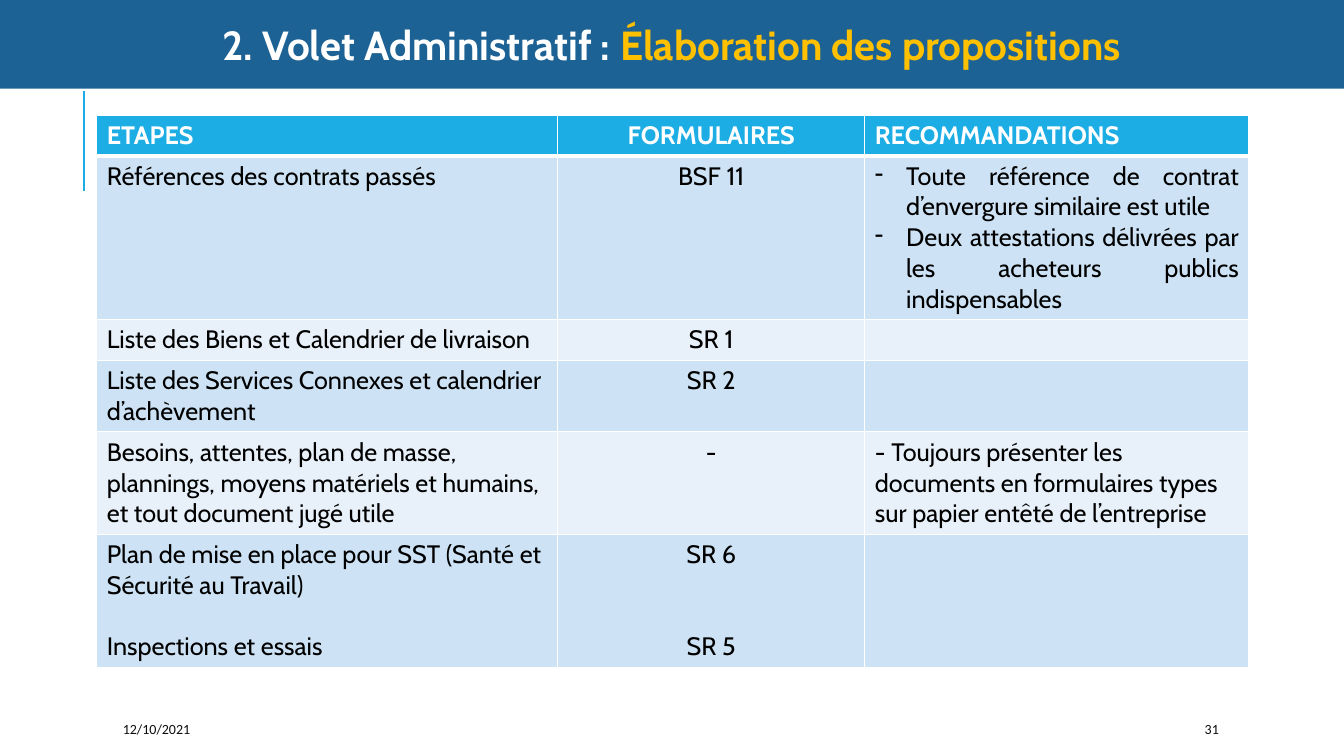
from dataclasses import dataclass

from lxml.etree import SubElement
from pptx import Presentation
from pptx.dml.color import RGBColor
from pptx.enum.shapes import MSO_CONNECTOR, MSO_SHAPE
from pptx.enum.text import MSO_ANCHOR, PP_ALIGN
from pptx.oxml.ns import qn
from pptx.util import Inches, Pt

SLIDE_WIDTH, SLIDE_HEIGHT = Inches(13.33), Inches(7.5)


@dataclass(frozen=True)
class Theme:
    font: str = "Cabin"
    footer_font: str = "Calibri"
    title_size: float = 29
    table_size: float = 18
    footer_size: float = 10
    white: str = "FFFFFF"
    black: str = "000000"
    footer_ink: str = "0D0D0D"
    banner: str = "1D6294"
    highlight: str = "FFC000"
    accent: str = "1CADE4"
    bands: tuple = ("CDE3F5", "E8F1FA")


THEME = Theme()
TABLE_LINE = Inches(0.305)
CELL_PADDING = Inches(0.1)
COLUMN_SHARES = (6, 4, 5)
COLUMN_ALIGNS = (PP_ALIGN.LEFT, PP_ALIGN.CENTER, PP_ALIGN.LEFT)
HEADINGS = ("ETAPES", "FORMULAIRES", "RECOMMANDATIONS")

# Lines of text in the row, then the paragraphs of its three cells
STEPS = [
    (5, ["Références des contrats passés"], ["BSF 11"],
     ["• Toute référence de contrat d’envergure similaire est utile",
      "• Deux attestations délivrées par les acheteurs publics indispensables"]),
    (1, ["Liste des Biens et Calendrier de livraison"], ["SR 1"], []),
    (2, ["Liste des Services Connexes et calendrier d’achèvement"], ["SR 2"], []),
    (3, ["Besoins, attentes, plan de masse, plannings, moyens matériels et humains, "
         "et tout document jugé utile"], ["-"],
     ["- Toujours présenter les documents en formulaires types sur papier entêté "
      "de l’entreprise"]),
    (4, ["Plan de mise en place pour SST (Santé et Sécurité au Travail)",
         "Inspections et essais"], ["SR 6", "SR 5"], []),
]
# Blank lines before the second paragraph, by column
SECOND_PARAGRAPH_GAPS = (1, 2, 0)


def across(percent):
    return round(SLIDE_WIDTH * percent / 100)


def down(percent):
    return round(SLIDE_HEIGHT * percent / 100)


def area(left, top, width, height):
    """Turn percentages of the slide into a position and a size."""
    return across(left), down(top), across(width), down(height)


def add_run(paragraph, text, color, **font_format):
    run = paragraph.add_run()
    run.text = text
    for attribute, value in font_format.items():
        setattr(run.font, attribute, value)
    run.font.color.rgb = RGBColor.from_string(color)


def add_banner(slide, parts):
    """Draw the title bar; parts are (text, colour) pairs."""
    banner = slide.shapes.add_shape(MSO_SHAPE.RECTANGLE, *area(0, 0, 100, 11.73))
    banner.shadow.inherit = False
    banner.fill.solid()
    banner.fill.fore_color.rgb = RGBColor.from_string(THEME.banner)
    banner.line.fill.background()
    banner.text_frame.vertical_anchor = MSO_ANCHOR.MIDDLE
    heading = banner.text_frame.paragraphs[0]
    heading.alignment = PP_ALIGN.CENTER
    for text, color in parts:
        add_run(heading, text, color, name=THEME.font, size=Pt(THEME.title_size), bold=True)


def add_accent_line(slide):
    x = across(6.25)
    accent = slide.shapes.add_connector(MSO_CONNECTOR.STRAIGHT, x, down(25.33), x, down(12))
    accent.line.color.rgb = RGBColor.from_string(THEME.accent)
    accent.line.width = Pt(1.5)
    SubElement(accent._element.spPr, qn("a:effectLst"))


def add_footer(slide, text, left, width):
    frame = slide.shapes.add_textbox(*area(left, 94.4, width, 4)).text_frame
    frame.word_wrap = True
    frame.vertical_anchor = MSO_ANCHOR.MIDDLE
    add_run(frame.paragraphs[0], text, THEME.footer_ink,
            name=THEME.footer_font, size=Pt(THEME.footer_size))


def set_borders(cell, top, bottom):
    """Give the cell white borders; top and bottom are widths in points."""
    properties = cell._tc.get_or_add_tcPr()
    for side, width in {"lnL": 1, "lnR": 1, "lnT": top, "lnB": bottom}.items():
        border = SubElement(properties, qn(f"a:{side}"), w=str(Pt(width)))
        fill = SubElement(border, qn("a:solidFill"))
        SubElement(fill, qn("a:srgbClr"), val=THEME.white)


def set_dash_bullet(paragraph):
    properties = paragraph._p.get_or_add_pPr()
    indent = Inches(0.31)
    properties.set("marL", str(indent))
    properties.set("indent", str(-indent))
    SubElement(properties, qn("a:buChar"), char="-")


def fill_cell(cell, paragraphs, column, color, fill, bold=False):
    """Write the paragraphs; those that start with • become justified dash items."""
    cell.fill.solid()
    cell.fill.fore_color.rgb = RGBColor.from_string(fill)
    for index, text in enumerate(paragraphs):
        frame = cell.text_frame
        paragraph = frame.add_paragraph() if index else frame.paragraphs[0]
        paragraph.alignment = COLUMN_ALIGNS[column]
        if index and SECOND_PARAGRAPH_GAPS[column]:
            paragraph.space_before = TABLE_LINE * SECOND_PARAGRAPH_GAPS[column]
        if text.startswith("• "):
            paragraph.alignment = PP_ALIGN.JUSTIFY
            set_dash_bullet(paragraph)
        add_run(paragraph, text.removeprefix("• "), color,
                name=THEME.font, size=Pt(THEME.table_size), bold=bold)


def add_steps_table(slide):
    rows = [(1, *([heading] for heading in HEADINGS)), *STEPS]
    heights = [TABLE_LINE * lines + CELL_PADDING for lines, *_ in rows]
    width = across(85.73)
    table = slide.shapes.add_table(len(rows), len(HEADINGS), across(7.2), down(15.2),
                                   width, sum(heights)).table
    for column, share in zip(table.columns, COLUMN_SHARES):
        column.width = round(width * share / sum(COLUMN_SHARES))
    for row, (height, (_, *contents)) in enumerate(zip(heights, rows)):
        table.rows[row].height = height
        header = row == 0
        color = THEME.white if header else THEME.black
        fill = THEME.accent if header else THEME.bands[(row - 1) % 2]
        for column, paragraphs in enumerate(contents):
            cell = table.cell(row, column)
            set_borders(cell, top=3 if row == 1 else 1, bottom=3 if header else 1)
            fill_cell(cell, paragraphs, column, color, fill, bold=header)


def main():
    presentation = Presentation()
    presentation.slide_width, presentation.slide_height = SLIDE_WIDTH, SLIDE_HEIGHT
    slide = presentation.slides.add_slide(presentation.slide_layouts[6])
    add_accent_line(slide)
    add_footer(slide, "12/10/2021", left=8.4, width=17.7)
    add_footer(slide, "31", left=88.9, width=7.95)
    add_banner(slide, [("2. Volet Administratif : ", THEME.white),
                       ("Élaboration des propositions", THEME.highlight)])
    add_steps_table(slide)
    presentation.save("out.pptx")


if __name__ == "__main__":
    main()
